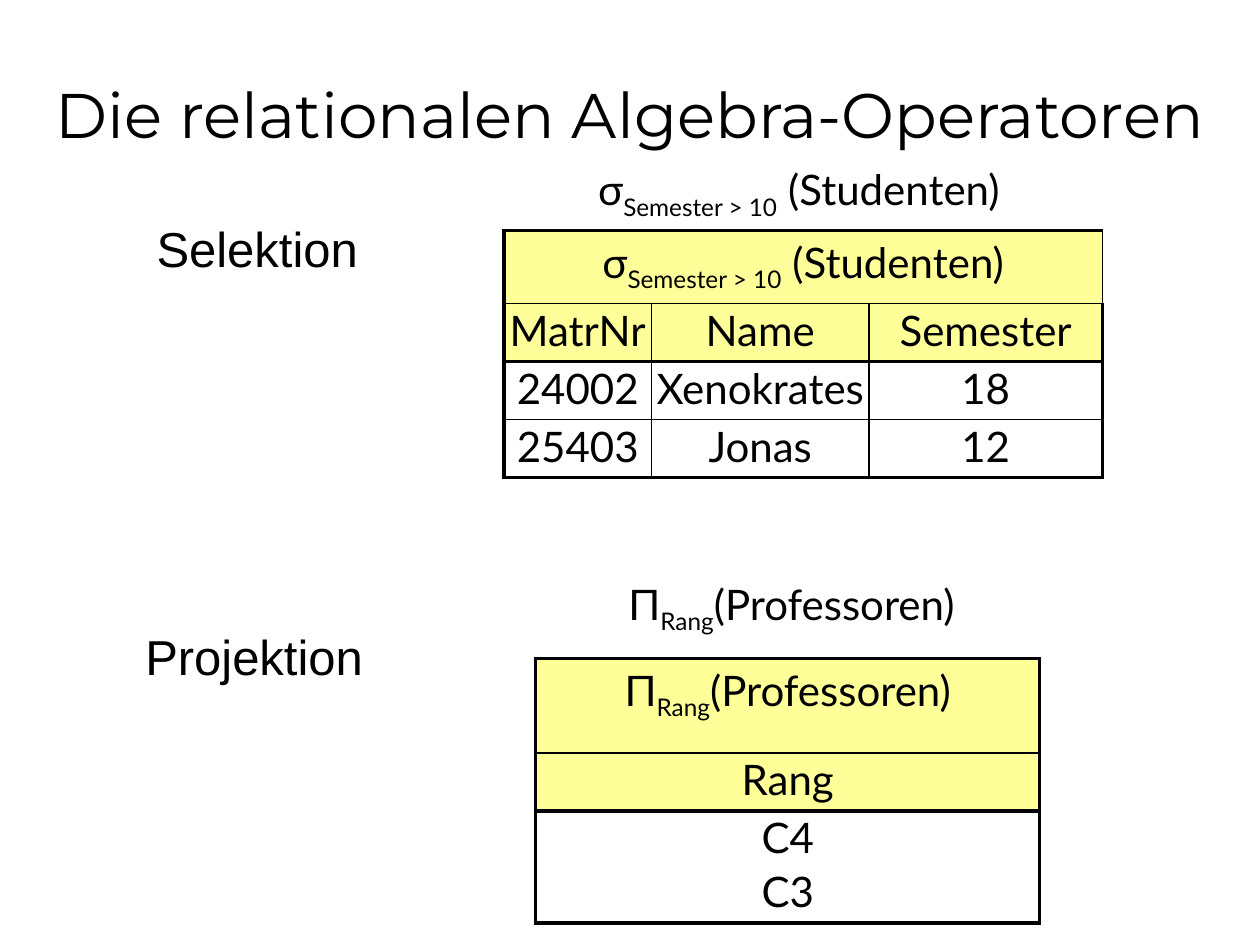
from lxml.etree import SubElement
from pptx import Presentation
from pptx.dml.color import RGBColor
from pptx.enum.text import MSO_ANCHOR, MSO_AUTO_SIZE, PP_ALIGN
from pptx.oxml.ns import qn
from pptx.util import Cm, Pt

COLORS = {"ink": "000000", "head": "FFFF99"}
THICK, THIN = 2.25, 1
SELECT = [("σ", 0), ("Semester > 10", -25), (" (Studenten)", 0)]
PROJECT = [("Π", 0), ("Rang", -25), ("(Professoren)", 0)]

TITLE = "Die relationalen Algebra-Operatoren"
LABELS = [
    (SELECT, (11.38, 3.18, 9.45, 1.27), 24, "Lato"),
    ("Selektion", (2.9, 4.29, 4.57, 1.45), 28, "Arial"),
    (PROJECT, (12.22, 11.53, 7.47, 1.27), 24, "Lato"),
    ("Projektion ", (2.67, 12.5, 5.18, 1.45), 28, "Arial"),
]
TABLES = [
    {"at": (10.16, 4.65), "cols": [2.97, 4.39, 4.7],
     "rows": [1.47, 1.17, 1.17, 1.17],
     "cells": [[SELECT], ["MatrNr", "Name", "Semester"],
               ["24002", "Xenokrates", "18"], ["25403", "Jonas", "12"]]},
    {"at": (10.8, 13.28), "cols": [10.16], "rows": [1.9, 1.17, 2.26],
     "cells": [[PROJECT], ["Rang"], ["C4\nC3"]]},
]


def color(name):
    return RGBColor.from_string(COLORS[name])


def write(frame, text, size, face):
    lines = [text] if isinstance(text, list) else [
        [(line, 0)] for line in text.split("\n")]
    for i, line in enumerate(lines):
        para = frame.add_paragraph() if i else frame.paragraphs[0]
        para.alignment = PP_ALIGN.CENTER
        para.font.size, para.font.name = Pt(size), face
        para.font.color.rgb = color("ink")
        for part, shift in line:
            run = para.add_run()
            run.text = part
            if shift:
                run.font._element.set("baseline", str(shift * 1000))


def add_label(slide, text, box, size, face):
    frame = slide.shapes.add_textbox(*map(Cm, box)).text_frame
    frame.word_wrap = False
    frame.auto_size = MSO_AUTO_SIZE.SHAPE_TO_FIT_TEXT
    write(frame, text, size, face)


def add_edge(cell, side, width):
    line = SubElement(cell._tc.get_or_add_tcPr(), qn(f"a:ln{side}"),
                      w=str(Pt(width)))
    fill = SubElement(line, qn("a:solidFill"))
    SubElement(fill, qn("a:srgbClr"), val=COLORS["ink"])


def add_grid(slide, at, cols, rows, cells):
    high, wide = len(rows), len(cols)
    size = Cm(sum(cols)), Cm(sum(rows))
    table = slide.shapes.add_table(high, wide, *map(Cm, at), *size).table
    table.first_row = table.horz_banding = False
    for col, width in zip(table.columns, cols):
        col.width = Cm(width)
    for row, height in zip(table.rows, rows):
        row.height = Cm(height)
    if wide > 1:
        table.cell(0, 0).merge(table.cell(0, wide - 1))
    for r in range(high):
        for c in range(wide):
            cell = table.cell(r, c)
            cell.margin_left = cell.margin_right = 0
            edges = {"L": c == 0, "R": c == wide - 1,
                     "T": r in (0, 2), "B": r in (1, high - 1)}
            for side, bold in edges.items():
                add_edge(cell, side, THICK if bold else THIN)
            if r < 2:
                cell.fill.solid()
                cell.fill.fore_color.rgb = color("head")
            else:
                cell.fill.background()
            if c < len(cells[r]):
                write(cell.text_frame, cells[r][c], 24, "Lato")
                for para in cell.text_frame.paragraphs:
                    para.line_spacing = 0.9
                    para.space_before = Pt(4.8)


def main():
    deck = Presentation()
    deck.slide_width, deck.slide_height = Cm(25.4), Cm(19.05)
    slide = deck.slides.add_slide(deck.slide_layouts[6])
    title = slide.shapes.add_textbox(0, 0, Cm(25.4), Cm(3.18)).text_frame
    title.word_wrap = True
    title.vertical_anchor = MSO_ANCHOR.BOTTOM
    write(title, TITLE, 36, "Montserrat")
    for label in LABELS:
        add_label(slide, *label)
    for grid in TABLES:
        add_grid(slide, **grid)
    deck.save("out.pptx")


if __name__ == "__main__":
    main()
